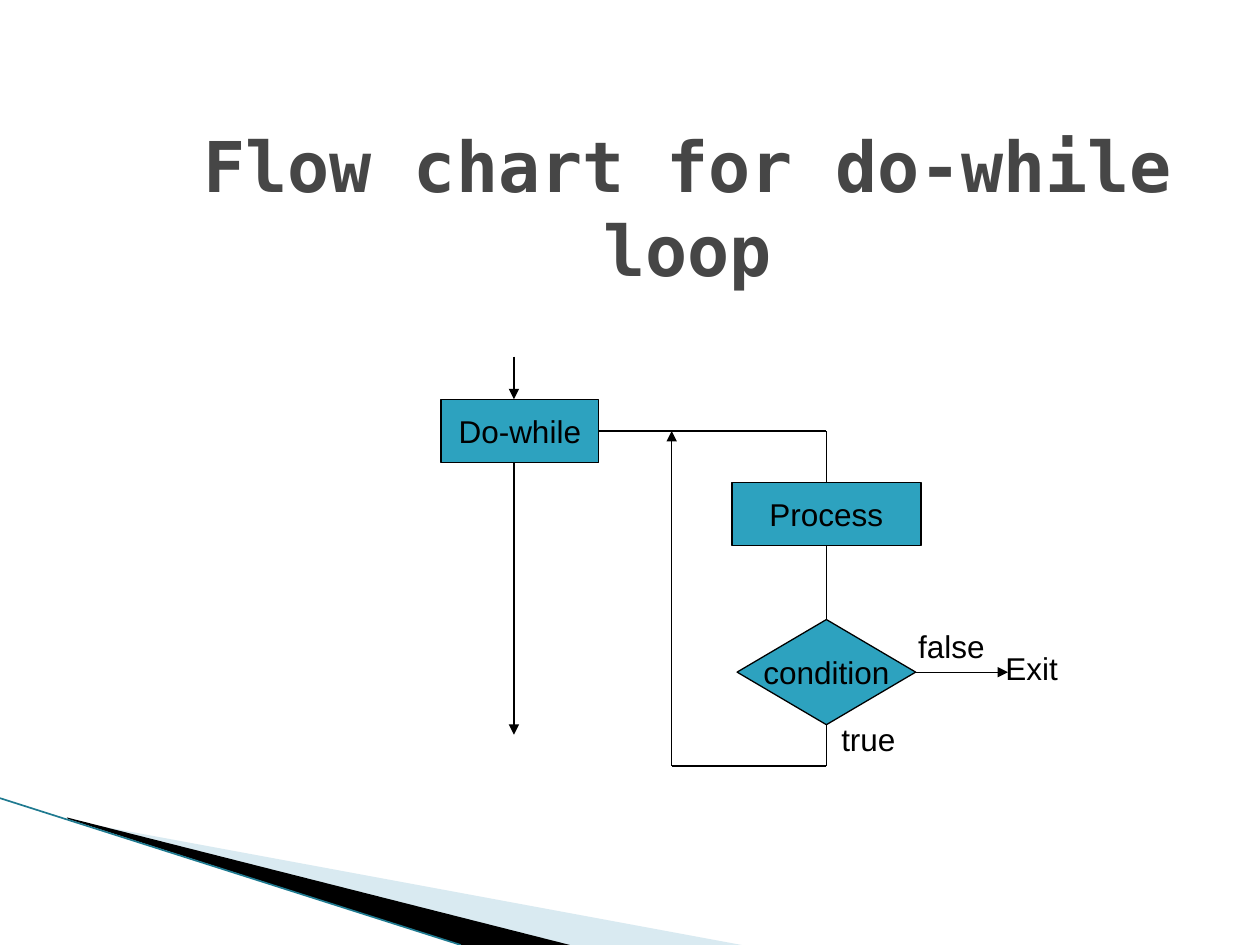
from lxml.etree import SubElement
from pptx import Presentation
from pptx.dml.color import RGBColor
from pptx.enum.shapes import MSO_CONNECTOR as Connector, MSO_SHAPE as Shape
from pptx.enum.text import MSO_ANCHOR as Anchor, MSO_AUTO_SIZE as AutoSize, PP_ALIGN as Align
from pptx.oxml.ns import qn
from pptx.util import Cm, Pt

THEME = {
    "black": RGBColor.from_string("000000"),
    "node": RGBColor.from_string("2DA2BF"),
    "pale": RGBColor.from_string("A0CBDC"),
    "edge": RGBColor.from_string("1F7A90"),
    "line": Pt(0.75),
    "edge_line": Pt(0.95),
    "title": {"name": "DejaVu Sans Mono", "size": Pt(40), "bold": True,
              "color": RGBColor.from_string("464646")},
    "body": {"name": "Arial", "size": Pt(18), "color": RGBColor.from_string("000000")},
}
TOP, BOTTOM, RIGHT = 0, 2, 3

# All lengths are centimetres.
SLIDE_SIZE = (25.4, 19.05)
TITLE = ("Flow chart for do-while loop", (3.38, 2.16, 20.96, 3.99))

# Corner ribbons: points, colour, opacity in percent
RIBBONS = [
    ([(1.4, 16.54), (14.95, 19.05), (11.46, 19.05), (1.4, 16.51)], "pale", 40),
    ([(1.35, 16.48), (11.49, 19.05), (9.29, 19.05), (1.37, 16.51)], "black", 100),
]
RIBBON_EDGE = ((0, 16.09), (9.29, 19.05))

# Flow chart columns and rows
ENTRY_X, LOOP_X, WORK_X, EXIT_X = 10.36, 13.54, 16.66, 20.32
ENTRY_Y, LOOP_Y, TEST_Y, END_Y, RETURN_Y = 7.19, 8.69, 13.55, 14.81, 15.44

# Nodes: text, shape, centre, size
NODES = {
    "loop": ("Do-while", Shape.FLOWCHART_PROCESS, (10.48, LOOP_Y), (3.18, 1.27)),
    "process": ("Process", Shape.FLOWCHART_PROCESS, (WORK_X, 10.36), (3.81, 1.27)),
    "test": ("condition", Shape.FLOWCHART_DECISION, (WORK_X, TEST_Y), (3.6, 2.12)),
}

# Lines: start, end, arrowhead; an end is a point or a (node, side) pair
LINES = [
    ((ENTRY_X, ENTRY_Y), (ENTRY_X, 8.05), True),
    ((ENTRY_X, 9.32), (ENTRY_X, END_Y), True),
    (("loop", RIGHT), (WORK_X, LOOP_Y), False),
    ((WORK_X, LOOP_Y), ("process", TOP), False),
    (("process", BOTTOM), ("test", TOP), False),
    (("test", BOTTOM), (WORK_X, RETURN_Y), False),
    ((WORK_X, RETURN_Y), (LOOP_X, RETURN_Y), False),
    ((LOOP_X, RETURN_Y), (LOOP_X, LOOP_Y), True),
    (("test", RIGHT), (EXIT_X, TEST_Y), True),
]

LABELS = [
    ("Exit", (20.02, 12.95, 1.57, 1.02)),
    ("true", (16.71, 14.4, 1.6, 1.02)),
    ("false", (18.26, 12.52, 1.85, 1.02)),
]


def cm(values):
    return [Cm(value) for value in values]


def write(shape, text, style, align, **frame_format):
    frame = shape.text_frame
    for name, value in frame_format.items():
        setattr(frame, name, value)
    paragraph = frame.paragraphs[0]
    paragraph.text = text
    paragraph.alignment = align
    for name, value in THEME[style].items():
        if name == "color":
            paragraph.runs[0].font.color.rgb = value
        else:
            setattr(paragraph.runs[0].font, name, value)


def fill(shape, color):
    shape.shadow.inherit = False
    shape.fill.solid()
    shape.fill.fore_color.rgb = THEME[color]


def add_ribbon(slide, points, color, opacity):
    start, *rest = [cm(point) for point in points]
    builder = slide.shapes.build_freeform(*start)
    builder.add_line_segments(rest, close=True)
    ribbon = builder.convert_to_shape()
    fill(ribbon, color)
    ribbon.line.fill.background()
    if opacity < 100:
        color_element = ribbon.fill._xPr.find(qn("a:solidFill"))[0]
        SubElement(color_element, qn("a:alpha"), val=str(opacity * 1000))


def add_node(slide, text, kind, center, size):
    corner = [middle - length / 2 for middle, length in zip(center, size)]
    node = slide.shapes.add_shape(kind, *cm(corner), *cm(size))
    fill(node, "node")
    node.line.color.rgb = THEME["black"]
    node.line.width = THEME["line"]
    write(node, text, "body", Align.CENTER,
          word_wrap=False, vertical_anchor=Anchor.MIDDLE)
    return node


def add_line(slide, nodes, start, end, arrow=False, color="black", width="line"):
    joined = [point[0] in nodes for point in (start, end)]
    points = [(0, 0) if join else cm(point)
              for point, join in zip((start, end), joined)]
    line = slide.shapes.add_connector(Connector.STRAIGHT, *points[0], *points[1])
    if joined[0]:
        line.begin_connect(nodes[start[0]], start[1])
    if joined[1]:
        line.end_connect(nodes[end[0]], end[1])
    line.line.color.rgb = THEME[color]
    line.line.width = THEME[width]
    if arrow:
        SubElement(line.line._get_or_add_ln(), qn("a:tailEnd"), type="triangle")
    SubElement(line._element.spPr, qn("a:effectLst"))


def main():
    presentation = Presentation()
    presentation.slide_width, presentation.slide_height = cm(SLIDE_SIZE)
    slide = presentation.slides.add_slide(presentation.slide_layouts[5])

    text, box = TITLE
    title = slide.shapes.title
    title.left, title.top, title.width, title.height = cm(box)
    write(title, text, "title", Align.CENTER, word_wrap=True,
          auto_size=AutoSize.NONE, vertical_anchor=Anchor.MIDDLE)

    for ribbon in RIBBONS:
        add_ribbon(slide, *ribbon)
    add_line(slide, {}, *RIBBON_EDGE, color="edge", width="edge_line")

    nodes = {name: add_node(slide, *node) for name, node in NODES.items()}
    for line in LINES:
        add_line(slide, nodes, *line)
    for text, box in LABELS:
        label = slide.shapes.add_textbox(*cm(box))
        write(label, text, "body", Align.LEFT,
              word_wrap=False, auto_size=AutoSize.SHAPE_TO_FIT_TEXT)

    presentation.save("out.pptx")


if __name__ == "__main__":
    main()
